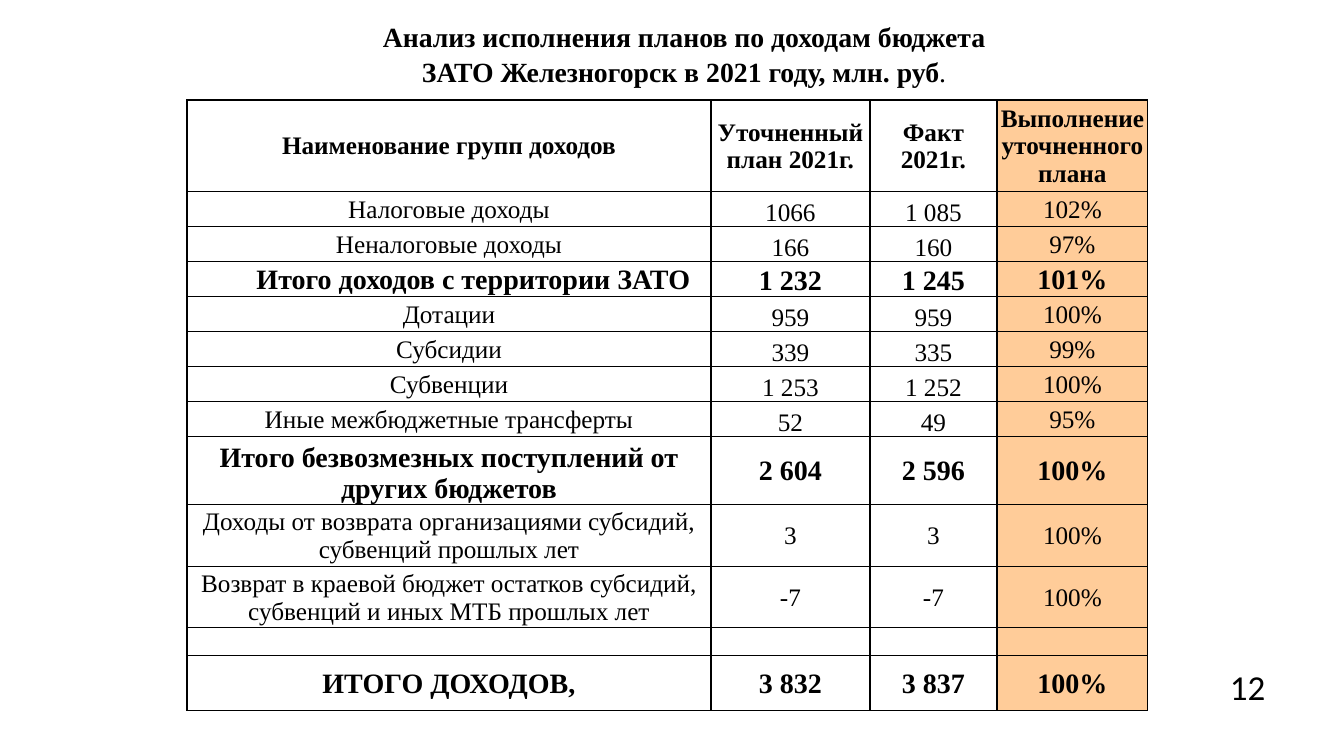
from dataclasses import dataclass

from lxml import etree
from pptx import Presentation
from pptx.dml.color import RGBColor
from pptx.enum.text import MSO_ANCHOR, PP_ALIGN
from pptx.oxml.ns import qn
from pptx.util import Emu, Pt

CENTER, LEFT = PP_ALIGN.CENTER, PP_ALIGN.LEFT
MIDDLE, BOTTOM = MSO_ANCHOR.MIDDLE, MSO_ANCHOR.BOTTOM
EMU_PER_PX = 914400 / 100.8


def px(length):
    return Emu(round(length * EMU_PER_PX))


@dataclass(frozen=True)
class Theme:
    ink: str = "000000"
    accent: str = "FFCC99"
    serif: str = "Times New Roman"
    sans: str = "Calibri"
    title: float = 19.8
    body: int = 18
    total: int = 20
    number: int = 25
    spacer: int = 12
    border: int = 1


@dataclass(frozen=True)
class Row:
    cells: tuple
    height: int = 35
    bold: bool = False
    total: bool = False
    label_anchor: int = MIDDLE
    value_anchor: int = MIDDLE
    label_indent: int = 1


class SlideBuilder:
    """Draws text and tables on one slide in a shared style."""

    def __init__(self, deck, theme):
        self.theme = theme
        self.page = deck.slides.add_slide(deck.slide_layouts[6])

    def span(self, para, text, size, bold=False, font=None):
        span = para.add_run()
        span.text = text
        span.font.size = Pt(size)
        span.font.bold = bold
        span.font.name = font or self.theme.serif
        span.font.color.rgb = RGBColor.from_string(self.theme.ink)

    def text(self, left, top, width, height, lines, align, inset=0, gap=0):
        box = self.page.shapes.add_textbox(px(left), px(top), px(width), px(height))
        frame = box.text_frame
        frame.word_wrap = True
        frame.vertical_anchor = MIDDLE
        frame.margin_left = frame.margin_right = px(inset)
        frame.margin_top = frame.margin_bottom = 0
        for index, spans in enumerate(lines):
            para = frame.add_paragraph() if index else frame.paragraphs[0]
            para.alignment = align
            para.space_before = Pt(gap if index else 0)
            for span in spans:
                self.span(para, *span)

    def borders(self, cell):
        properties = cell._tc.get_or_add_tcPr()
        for side in ("lnL", "lnR", "lnT", "lnB"):
            line = etree.SubElement(
                properties, qn(f"a:{side}"), w=str(Pt(self.theme.border))
            )
            fill = etree.SubElement(line, qn("a:solidFill"))
            etree.SubElement(fill, qn("a:srgbClr"), val=self.theme.ink)

    def cell(self, cell, text, size, bold, anchor, indent, accent):
        cell.margin_left = px(indent)
        cell.margin_right = cell.margin_top = px(1)
        cell.margin_bottom = 0
        cell.vertical_anchor = anchor
        self.borders(cell)
        if accent:
            cell.fill.solid()
            cell.fill.fore_color.rgb = RGBColor.from_string(self.theme.accent)
        else:
            cell.fill.background()
        frame = cell.text_frame
        for index, line in enumerate(text.split("\n")):
            para = frame.add_paragraph() if index else frame.paragraphs[0]
            para.alignment = CENTER
            if line:
                self.span(para, line, size, bold)
            else:
                etree.SubElement(
                    para._p, qn("a:endParaRPr"), sz=str(self.theme.spacer * 100)
                )

    def table(self, left, top, widths, rows):
        frame = self.page.shapes.add_table(
            len(rows), len(widths), px(left), px(top),
            px(sum(widths)), px(sum(row.height for row in rows)),
        )
        table = frame.table
        table.first_row = table.horz_banding = False
        for column, width in zip(table.columns, widths):
            column.width = px(width)
        last = len(widths) - 1
        for row_index, row in enumerate(rows):
            table.rows[row_index].height = px(row.height)
            size = self.theme.total if row.total else self.theme.body
            anchors = (row.label_anchor, row.value_anchor, row.value_anchor, MIDDLE)
            for index, (text, anchor) in enumerate(zip(row.cells, anchors)):
                self.cell(
                    table.cell(row_index, index), text, size,
                    row.bold or row.total, anchor,
                    1 if index else row.label_indent, index == last,
                )


def income(*cells, **options):
    return Row(cells, value_anchor=BOTTOM, **options)


BUDGET_ROWS = (
    Row(("Наименование групп доходов", "Уточненный план 2021г.", "Факт\n2021г.",
         "Выполнение уточненного плана"), 88, bold=True),
    income("Налоговые доходы", "1066", "1 085", "102%"),
    income("Неналоговые доходы", "166", "160", "97%"),
    income("Итого доходов с территории ЗАТО", "1 232", "1 245", "101%",
           total=True, label_indent=50),
    income("Дотации", "959", "959", "100%"),
    income("Субсидии", "339", "335", "99%"),
    income("Субвенции", "1 253", "1 252", "100%"),
    income("Иные межбюджетные трансферты", "52", "49", "95%"),
    Row(("Итого безвозмезных поступлений от других бюджетов",
         "2 604", "2 596", "100%"), 62, total=True, label_anchor=BOTTOM),
    Row(("Доходы от возврата организациями субсидий, субвенций прошлых лет",
         "3", "3", "100%"), 60),
    Row(("Возврат в краевой бюджет остатков субсидий, субвенций и иных МТБ прошлых лет",
         "-7", "-7", "100%"), 60),
    Row(("", "", "", ""), 28),
    Row(("ИТОГО ДОХОДОВ,", "3 832", "3 837", "100%"), 55, total=True),
)


def main():
    deck = Presentation()
    deck.slide_width, deck.slide_height = px(1344), px(756)
    theme = Theme()
    slide = SlideBuilder(deck, theme)
    slide.text(196, 20, 976, 68, (
        (("Анализ исполнения планов по доходам бюджета", theme.title, True),),
        (("ЗАТО Железногорск в 2021 году, млн. руб", theme.title, True),
         (".", theme.title)),
    ), CENTER, gap=1)
    slide.table(187, 100, (524, 159, 127, 151), BUDGET_ROWS)
    slide.text(1220, 661, 88, 52, ((("12", theme.number, False, theme.sans),),),
               LEFT, inset=10)
    deck.save("out.pptx")


if __name__ == "__main__":
    main()
